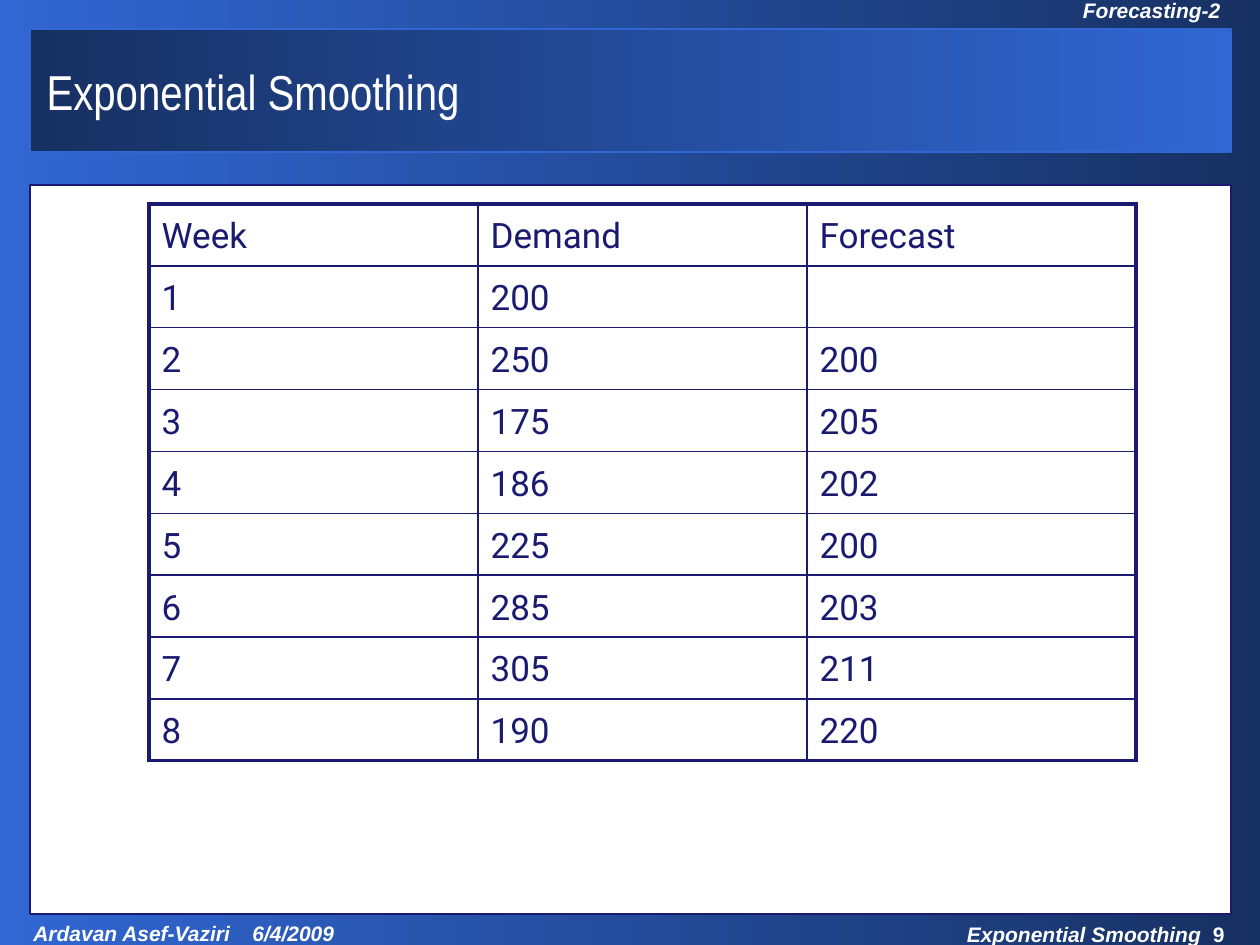
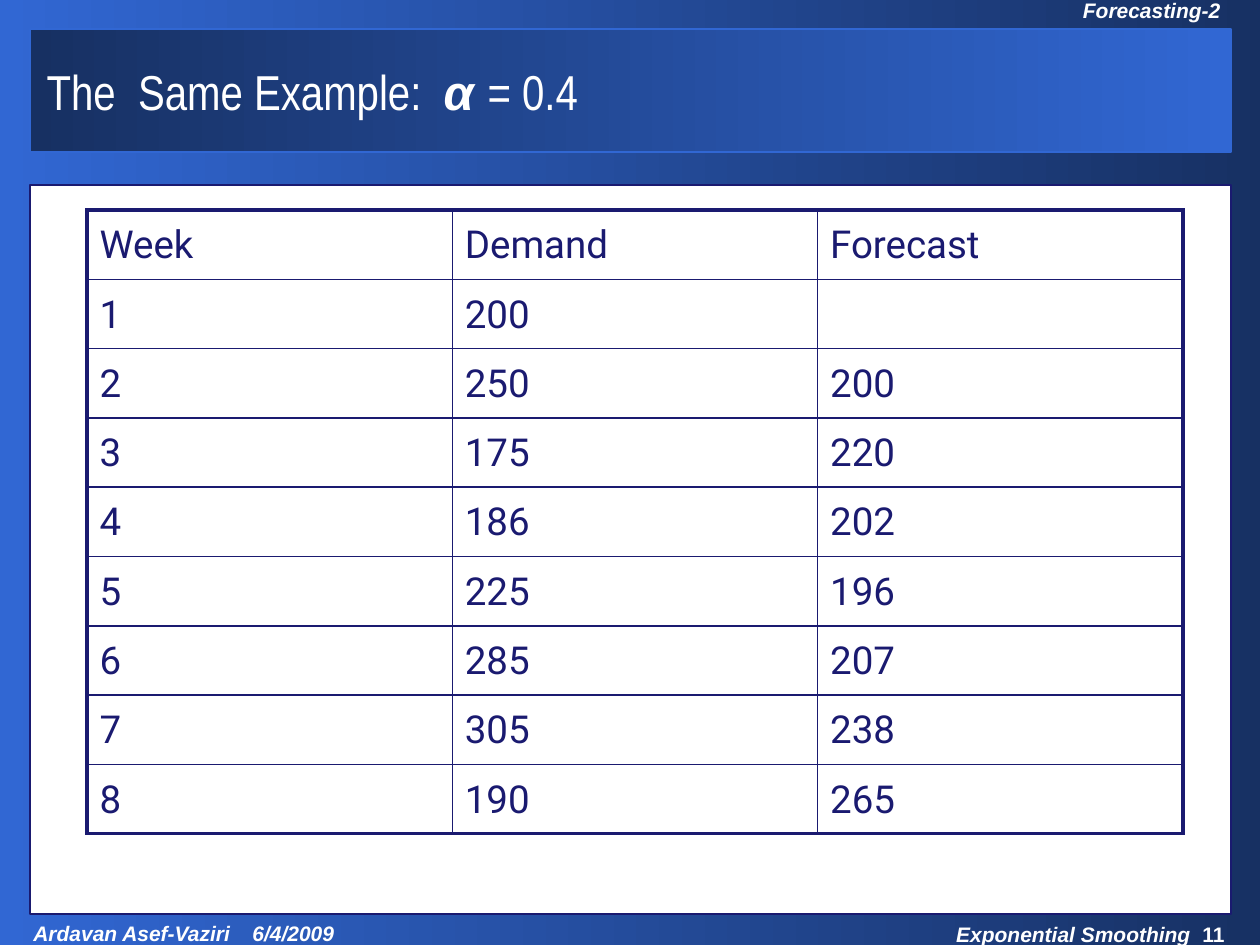
from lxml import etree
from pptx import Presentation
from pptx.dml.color import RGBColor
from pptx.enum.shapes import MSO_SHAPE
from pptx.enum.text import MSO_ANCHOR, MSO_AUTO_SIZE, PP_ALIGN
from pptx.oxml.ns import qn
from pptx.util import Emu, Pt

RECTANGLE = MSO_SHAPE.RECTANGLE
LEFT, RIGHT = PP_ALIGN.LEFT, PP_ALIGN.RIGHT
MIDDLE = MSO_ANCHOR.MIDDLE
NO_AUTOFIT = MSO_AUTO_SIZE.NONE

PX_PER_INCH = 126
TITLE_ONLY = 5

BRIGHT_BLUE = RGBColor(0x31, 0x67, 0xD3)
DEEP_BLUE = RGBColor(0x17, 0x30, 0x62)
NAVY = RGBColor(0x1A, 0x1A, 0x70)
WHITE = RGBColor(0xFF, 0xFF, 0xFF)

BODY_FONT, TITLE_FONT, TABLE_FONT = "Arial", "Arial Narrow", "Roboto"
INNER_BORDER, OUTER_BORDER = Pt(1), Pt(2.25)

HEADINGS = ("Week", "Demand", "Forecast")
DEMAND = (200, 250, 175, 186, 225, 285, 305, 190)
SMOOTHED_FORECAST = ("", 200, 205, 202, 200, 203, 211, 220)
ALPHA_04_FORECAST = ("", 200, 220, 202, 196, 207, 238, 265)


def px(length):
    """Turn a length in px into EMU."""
    return Emu(round(length * 914400 / PX_PER_INCH))


def box(left, top, width, height):
    """Turn a box in px into EMU."""
    return [px(length) for length in (left, top, width, height)]


def style_font(font, name, size, color):
    """Set the face, size and colour of a font."""
    font.name, font.size = name, Pt(size)
    font.color.rgb = color


def add_panel(slide, bounds, colors, outline):
    """Add a rectangle filled with one colour or a left-to-right gradient."""
    panel = slide.shapes.add_shape(RECTANGLE, *box(*bounds))
    panel.shadow.inherit = False
    if len(colors) == 1:
        panel.fill.solid()
        panel.fill.fore_color.rgb = colors[0]
    else:
        panel.fill.gradient()
        panel.fill.gradient_angle = 0
        for stop, color in zip(panel.fill.gradient_stops, colors):
            stop.color.rgb = color
    panel.line.color.rgb = outline
    panel.line.width = Pt(0.75)


def add_label(slide, bounds, text, alignment):
    """Add a small white bold italic label and return its paragraph."""
    label = slide.shapes.add_textbox(*box(*bounds)).text_frame
    label.word_wrap = True
    paragraph = label.paragraphs[0]
    paragraph.alignment = alignment
    style_font(paragraph.font, BODY_FONT, 12, WHITE)
    paragraph.font.bold = True
    paragraph.add_run().text = text
    paragraph.runs[0].font.italic = True
    return paragraph


def add_tab_stop(paragraph, position):
    """Give a paragraph one left tab stop, in px."""
    properties = paragraph._p.get_or_add_pPr()
    tabs = etree.Element(qn("a:tabLst"))
    etree.SubElement(tabs, qn("a:tab"), pos=str(px(position)), algn="l")
    properties.insert(0, tabs)


def add_frame(slide, page):
    """Draw the bands, header and footer that every slide shares."""
    add_panel(slide, (0, -9, 1273, 960), (BRIGHT_BLUE, DEEP_BLUE), BRIGHT_BLUE)
    add_panel(slide, (30, 29, 1201, 123), (DEEP_BLUE, BRIGHT_BLUE), BRIGHT_BLUE)
    add_panel(slide, (30, 185, 1201, 729), (WHITE,), NAVY)
    add_label(slide, (1047, -9, 186, 38), "Forecasting-2", RIGHT)
    author = add_label(slide, (21, 914, 407, 38),
                       "Ardavan Asef-Vaziri\t6/4/2009", LEFT)
    add_tab_stop(author, 219)
    topic = add_label(slide, (919, 915, 318, 38), "Exponential Smoothing  ", RIGHT)
    number = topic.add_run()
    number.text = str(page)
    number.font.italic = False


def set_title(slide, before, symbol="", after=""):
    """Fill the title, with an optional bold italic symbol inside it."""
    title = slide.shapes.title
    title.left, title.top, title.width, title.height = box(34, 32, 1196, 118)
    title.element.getparent().append(title.element)
    frame = title.text_frame
    frame.auto_size, frame.vertical_anchor = NO_AUTOFIT, MIDDLE
    paragraph = frame.paragraphs[0]
    paragraph.alignment = LEFT
    style_font(paragraph.font, TITLE_FONT, 28, WHITE)
    for text in filter(None, (before, symbol, after)):
        run = paragraph.add_run()
        run.text = text
        if text == symbol:
            run.font.name = BODY_FONT
            run.font.bold = run.font.italic = True


def set_borders(cell, widths):
    """Draw navy cell borders from a mapping of side letter to width."""
    properties = cell._tc.get_or_add_tcPr()
    for side, width in widths.items():
        border = etree.SubElement(properties, qn(f"a:ln{side}"), w=str(width))
        fill = etree.SubElement(border, qn("a:solidFill"))
        etree.SubElement(fill, qn("a:srgbClr"), val=str(NAVY))


def add_forecast_table(slide, bounds, forecast, size):
    """Add the table of weekly demand and forecast."""
    weeks = range(1, len(DEMAND) + 1)
    rows = [HEADINGS, *zip(weeks, DEMAND, forecast)]
    left, top, width, height = bounds
    table = slide.shapes.add_table(len(rows), len(HEADINGS), *box(*bounds)).table
    table.first_row = table.horz_banding = False
    for column in table.columns:
        column.width = px(width / len(HEADINGS))
    last_row, last_column = len(rows) - 1, len(HEADINGS) - 1
    for r, values in enumerate(rows):
        table.rows[r].height = px(height / len(rows))
        for c, value in enumerate(values):
            cell = table.cell(r, c)
            on_edge = {"L": c == 0, "R": c == last_column,
                       "T": r == 0, "B": r == last_row}
            set_borders(cell, {side: OUTER_BORDER if edge else INNER_BORDER
                               for side, edge in on_edge.items()})
            cell.fill.background()
            paragraph = cell.text_frame.paragraphs[0]
            paragraph.line_spacing = 1.15
            style_font(paragraph.font, TABLE_FONT, size, NAVY)
            if value != "":
                paragraph.add_run().text = str(value)


def add_forecast_slide(deck, page, title, bounds, forecast, size):
    """Add one slide with its frame, title and forecast table."""
    slide = deck.slides.add_slide(deck.slide_layouts[TITLE_ONLY])
    add_frame(slide, page)
    set_title(slide, *title)
    add_forecast_table(slide, bounds, forecast, size)


def main():
    """Build and save the deck."""
    deck = Presentation()
    deck.slide_width, deck.slide_height = px(1260), px(945)
    add_forecast_slide(deck, 9, ("Exponential Smoothing",),
                       (149, 204, 987, 557), SMOOTHED_FORECAST, 20)
    add_forecast_slide(deck, 11, ("The  Same Example:  ", "α ", "= 0.4"),
                       (87, 210, 1096, 624), ALPHA_04_FORECAST, 22)
    deck.save("out.pptx")


if __name__ == "__main__":
    main()
